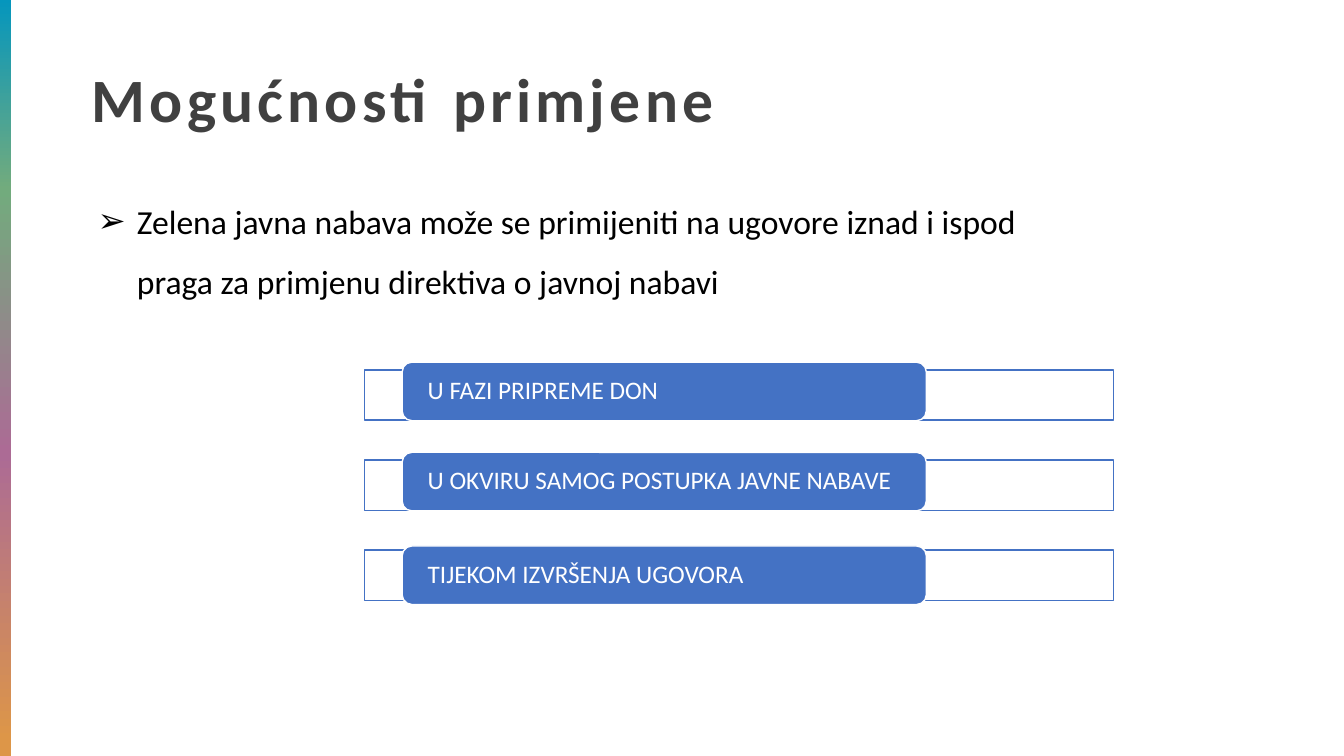
from copy import deepcopy
from dataclasses import dataclass

from lxml.etree import SubElement
from pptx import Presentation
from pptx.dml.color import RGBColor as Rgb
from pptx.enum.shapes import MSO_SHAPE as Shape
from pptx.enum.text import MSO_ANCHOR as Anchor, PP_ALIGN as Align
from pptx.oxml.ns import qn
from pptx.util import Pt


@dataclass(frozen=True)
class Theme:
    """Font, colours and type sizes of the slide."""
    font: str = "Calibri"
    white: str = "FFFFFF"
    black: str = "000000"
    heading: str = "404040"
    accent: str = "4472C4"
    stripe: tuple = ((0, "0596BD"), (0.25, "72AB7D"), (0.6, "AC6B95"), (0.98, "DD9648"))
    title_size: int = 44
    body_size: int = 24
    card_size: int = 18


THEME = Theme()
PHASES = (
    ("U FAZI PRIPREME DON", 5.5),
    ("U OKVIRU SAMOG POSTUPKA JAVNE NABAVE", 5.5),
    ("TIJEKOM IZVRŠENJA UGOVORA", 3),
)
BAR_TOP, BAR_STEP = 264.2, 64.4


def place(shape, left, top, width, height):
    """Move and size a shape, in points."""
    shape.left, shape.top = Pt(left), Pt(top)
    shape.width, shape.height = Pt(width), Pt(height)


def write(para, text, size, color, spacing, bold=False):
    """Add one formatted run to a left-aligned paragraph."""
    para.alignment = Align.LEFT
    para.line_spacing = spacing
    para.space_before = Pt(0)
    span = para.add_run()
    span.text = text
    span.font.name = THEME.font
    span.font.size = Pt(size)
    span.font.bold = bold
    span.font.color.rgb = Rgb.from_string(color)
    return span


def add_block(page, kind, box, fill, line):
    """Add a flat shape with a solid fill and a thin outline."""
    shape = page.shapes.add_shape(kind, *map(Pt, box))
    shape.shadow.inherit = False
    shape.fill.solid()
    shape.fill.fore_color.rgb = Rgb.from_string(fill)
    shape.line.color.rgb = Rgb.from_string(line)
    shape.line.width = Pt(1)
    return shape


def add_stripe(page):
    """Add the vertical gradient stripe along the left edge."""
    stripe = page.shapes.add_shape(Shape.RECTANGLE, 0, 0, Pt(8), Pt(540))
    stripe.shadow.inherit = False
    stripe.line.fill.background()
    stripe.fill.gradient()
    stripe.fill.gradient_angle = 270
    stops = stripe.element.spPr.find(".//" + qn("a:gsLst"))
    for _ in THEME.stripe[2:]:
        stops.append(deepcopy(stops[0]))
    for stop, (position, color) in zip(stripe.fill.gradient_stops, THEME.stripe):
        stop.position = position
        stop.color.rgb = Rgb.from_string(color)


def fill_title(title, text):
    """Place the title and write its letter-spaced text."""
    place(title, 58.3, 29.5, 712, 88)
    title.text_frame.vertical_anchor = Anchor.MIDDLE
    span = write(title.text_frame.paragraphs[0], text, THEME.title_size, THEME.heading, 0.9, True)
    span.font._element.set("spc", "300")


def fill_body(body, text):
    """Place the body and write its arrow-bulleted paragraph."""
    place(body, 62.6, 125.3, 712, 322)
    para = body.text_frame.paragraphs[0]
    props = para._p.get_or_add_pPr()
    props.set("marL", str(Pt(28)))
    props.set("indent", str(-Pt(28)))
    SubElement(props, qn("a:buChar")).set("char", "➢")
    write(para, text, THEME.body_size, THEME.black, 1.5)


def add_phase(page, text, top, rise):
    """Add an outlined bar with its rounded label card."""
    bar = add_block(page, Shape.RECTANGLE, (260.6, top, 535, 36), THEME.white, THEME.accent)
    color = bar.element.spPr.find(qn("a:solidFill"))[0]
    SubElement(color, qn("a:alpha")).set("val", "90000")
    card = add_block(page, Shape.ROUNDED_RECTANGLE, (287.3, top - rise, 374.4, 41.8),
                     THEME.accent, THEME.white)
    frame = card.text_frame
    frame.word_wrap = True
    frame.vertical_anchor = Anchor.MIDDLE
    frame.margin_left = frame.margin_right = Pt(16.2)
    frame.margin_top = frame.margin_bottom = Pt(0)
    write(frame.paragraphs[0], text, THEME.card_size, THEME.white, 0.9)


def main():
    """Build and save the slide."""
    deck = Presentation()
    deck.slide_width, deck.slide_height = Pt(960), Pt(540)
    page = deck.slides.add_slide(deck.slide_layouts[1])
    add_stripe(page)
    fill_title(page.shapes.title, "Mogućnosti primjene")
    fill_body(page.placeholders[1], "Zelena javna nabava može se primijeniti na ugovore "
              "iznad i ispod praga za primjenu direktiva o javnoj nabavi")
    for index, (text, rise) in enumerate(PHASES):
        add_phase(page, text, BAR_TOP + index * BAR_STEP, rise)
    deck.save("out.pptx")


if __name__ == "__main__":
    main()
